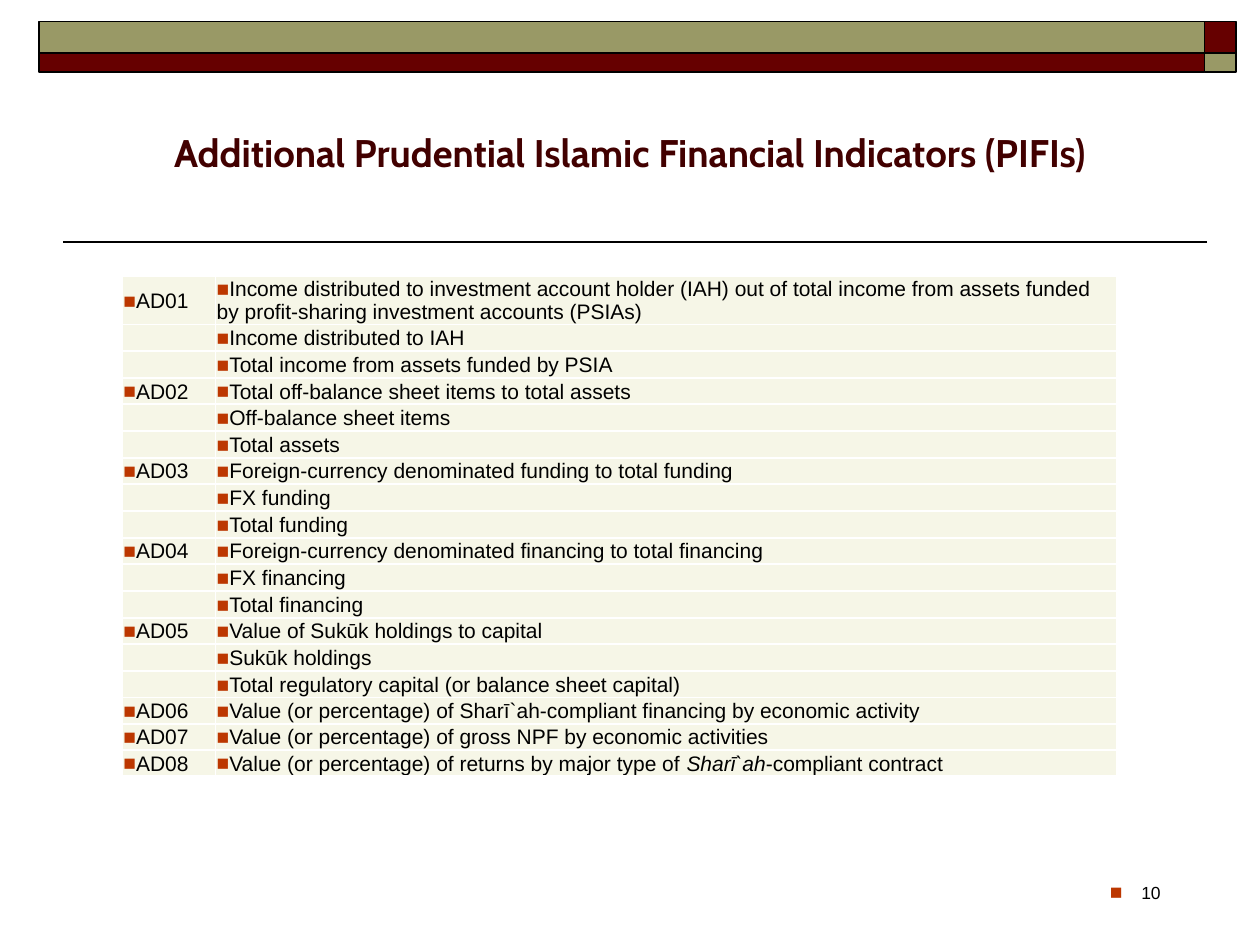
from lxml import etree
from pptx import Presentation
from pptx.dml.color import RGBColor
from pptx.enum.shapes import MSO_CONNECTOR, MSO_SHAPE
from pptx.enum.text import MSO_ANCHOR, PP_ALIGN
from pptx.oxml.ns import qn
from pptx.util import Inches, Pt

RECTANGLE = MSO_SHAPE.RECTANGLE
STRAIGHT = MSO_CONNECTOR.STRAIGHT
MIDDLE = MSO_ANCHOR.MIDDLE
LEFT, CENTER, RIGHT = PP_ALIGN.LEFT, PP_ALIGN.CENTER, PP_ALIGN.RIGHT

BLACK, WHITE, MAROON, OLIVE = "000000", "FFFFFF", "660000", "999966"
TITLE_COLOR, BULLET_COLOR, CELL_COLOR = "420000", "BC3700", "F6F6E7"

TITLE = "Additional Prudential Islamic Financial Indicators (PIFIs)"
PAGE_NUMBER = "10"
# Each indicator: code, then its lines; a line in parts alternates upright and italic.
INDICATORS = [
    ("AD01", ["Income distributed to investment account holder (IAH) out of total income "
              "from assets funded by profit-sharing investment accounts (PSIAs)",
              "Income distributed to IAH",
              "Total income from assets funded by PSIA"]),
    ("AD02", ["Total off-balance sheet items to total assets",
              "Off-balance sheet items",
              "Total assets"]),
    ("AD03", ["Foreign-currency denominated funding to total funding",
              "FX funding",
              "Total funding"]),
    ("AD04", ["Foreign-currency denominated financing to total financing",
              "FX financing",
              "Total financing"]),
    ("AD05", ["Value of Sukūk holdings to capital",
              "Sukūk holdings",
              "Total regulatory capital (or balance sheet capital)"]),
    ("AD06", ["Value (or percentage) of Sharī`ah-compliant financing by economic activity"]),
    ("AD07", ["Value (or percentage) of gross NPF by economic activities"]),
    ("AD08", [("Value (or percentage) of returns by major type of ", "Sharī`ah",
               "-compliant contract")]),
]

BAND_COLUMNS = [(0.31, 9.25), (9.56, 0.25)]  # left, width
BAND_ROWS = [(0.17, 0.25, (OLIVE, MAROON)), (0.42, 0.15, (MAROON, OLIVE))]
COLUMN_WIDTHS = [0.74, 7.15]
FIRST_ROW_HEIGHT, OTHER_ROWS_HEIGHT = 0.38, 3.53


def rgb(color):
    return RGBColor.from_string(color)


def add_element(parent, tag, **attributes):
    return etree.SubElement(parent, qn(tag), attributes)


def write_text(paragraph, text, size=12, font="Arial", color=BLACK, bold=False, align=LEFT):
    """Write a string, or parts that alternate upright and italic."""
    paragraph.alignment = align
    parts = [text] if isinstance(text, str) else text
    for index, part in enumerate(parts):
        run = paragraph.add_run()
        run.text = part
        run.font.size, run.font.name = Pt(size), font
        run.font.bold, run.font.italic = bold, index % 2 == 1
        run.font.color.rgb = rgb(color)


def add_bullet(paragraph, size=100, hanging=0):
    properties = paragraph._p.get_or_add_pPr()
    properties.set("marL", str(Inches(hanging)))
    properties.set("indent", str(-Inches(hanging)))
    spacing = add_element(properties, "a:spcBef")
    add_element(spacing, "a:spcPct", val="20000")
    color = add_element(properties, "a:buClr")
    add_element(color, "a:srgbClr", val=BULLET_COLOR)
    add_element(properties, "a:buSzPct", val=str(size * 1000))
    add_element(properties, "a:buFont", typeface="Arial")
    add_element(properties, "a:buChar", char="■")


def format_cell(cell, text):
    cell.margin_left = cell.margin_right = cell.margin_top = Inches(0.01)
    cell.margin_bottom = 0
    cell.vertical_anchor = MIDDLE
    paragraph = cell.text_frame.paragraphs[0]
    if text:
        write_text(paragraph, text)
        add_bullet(paragraph)
    else:
        add_element(paragraph._p, "a:endParaRPr", sz="1200")
    properties = cell._tc.get_or_add_tcPr()
    for side in ("a:lnL", "a:lnR", "a:lnT", "a:lnB"):
        border = add_element(properties, side, w=str(Pt(1)))
        fill = add_element(border, "a:solidFill")
        add_element(fill, "a:srgbClr", val=WHITE)
    cell.fill.solid()
    cell.fill.fore_color.rgb = rgb(CELL_COLOR)


def add_header(slide):
    rule = slide.shapes.add_connector(STRAIGHT, Inches(9.58), Inches(1.92),
                                      Inches(0.5), Inches(1.92))
    rule.line.color.rgb = rgb(BLACK)
    rule.line.width = Pt(1)
    add_element(rule._element.spPr, "a:effectLst")
    for top, height, colors in BAND_ROWS:
        for (left, width), color in zip(BAND_COLUMNS, colors):
            band = slide.shapes.add_shape(RECTANGLE, Inches(left), Inches(top),
                                          Inches(width), Inches(height))
            band.shadow.inherit = False
            band.fill.solid()
            band.fill.fore_color.rgb = rgb(color)
            band.line.color.rgb = rgb(BLACK)
            band.line.width = Pt(1)


def add_title(slide):
    title = slide.shapes.title
    title.left, title.top = Inches(0.5), Inches(0.58)
    title.width, title.height = Inches(9), Inches(1.25)
    title.text_frame.vertical_anchor = MIDDLE
    write_text(title.text_frame.paragraphs[0], TITLE, size=22, font="Cabin",
               color=TITLE_COLOR, bold=True, align=CENTER)


def add_indicator_table(slide):
    rows = [(code if index == 0 else "", line)
            for code, lines in INDICATORS for index, line in enumerate(lines)]
    frame = slide.shapes.add_table(len(rows), len(COLUMN_WIDTHS), Inches(0.97), Inches(2.19),
                                   Inches(sum(COLUMN_WIDTHS)),
                                   Inches(FIRST_ROW_HEIGHT + OTHER_ROWS_HEIGHT))
    table = frame.table
    table.first_row = table.horz_banding = False
    for column, width in zip(table.columns, COLUMN_WIDTHS):
        column.width = Inches(width)
    for index, texts in enumerate(rows):
        height = FIRST_ROW_HEIGHT if index == 0 else OTHER_ROWS_HEIGHT / (len(rows) - 1)
        table.rows[index].height = Inches(height)
        for cell, text in zip(table.rows[index].cells, texts):
            format_cell(cell, text)


def add_page_number(slide):
    box = slide.shapes.add_textbox(Inches(7.06), Inches(6.95), Inches(2.25), Inches(0.4))
    box.text_frame.word_wrap = True
    paragraph = box.text_frame.paragraphs[0]
    write_text(paragraph, PAGE_NUMBER, size=10, align=RIGHT)
    add_bullet(paragraph, size=120, hanging=0.25)


def main():
    presentation = Presentation()
    presentation.slide_width, presentation.slide_height = Inches(10), Inches(7.5)
    slide = presentation.slides.add_slide(presentation.slide_layouts[5])
    add_header(slide)
    add_title(slide)
    add_indicator_table(slide)
    add_page_number(slide)
    presentation.save("out.pptx")


if __name__ == "__main__":
    main()
